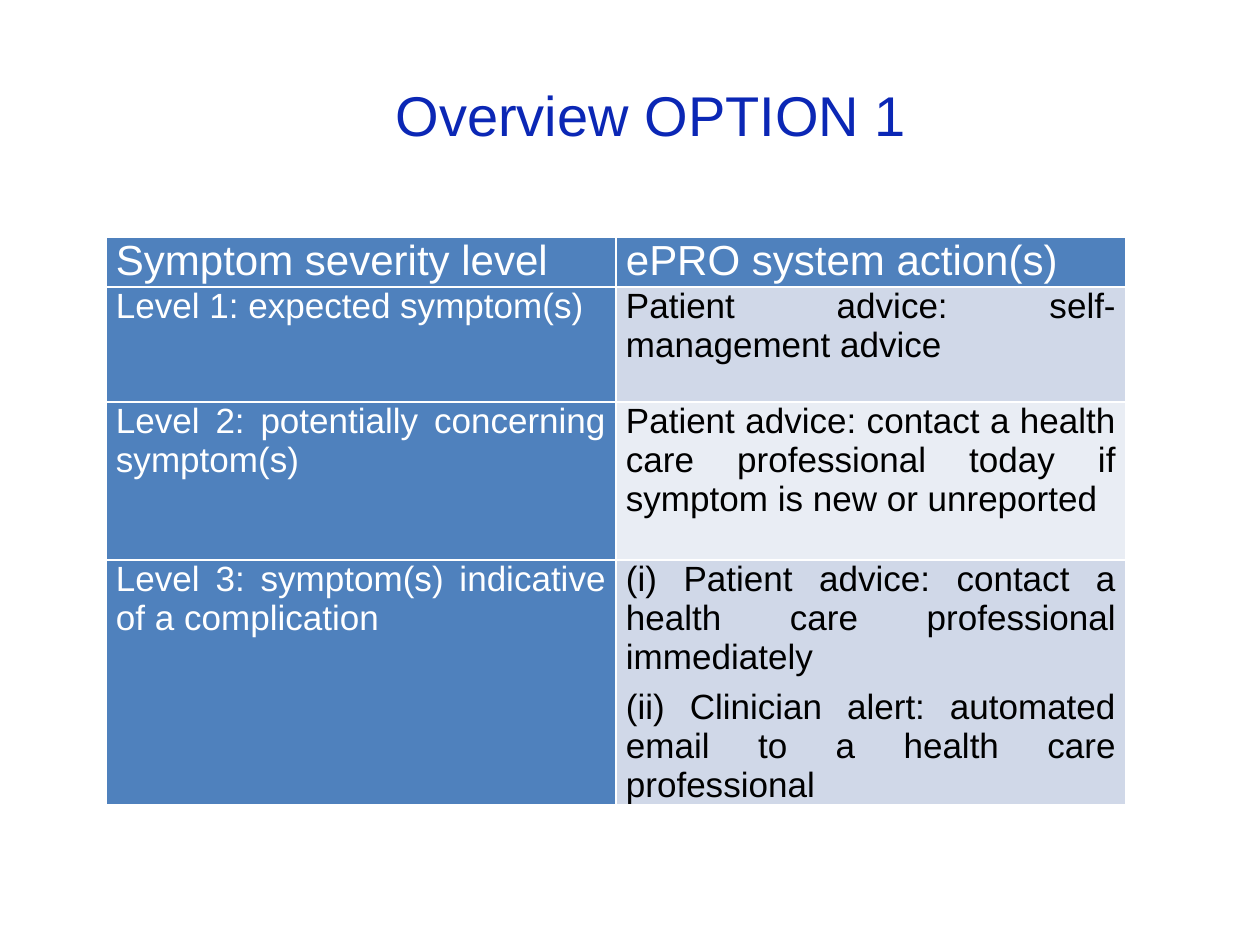
from lxml.etree import SubElement
from pptx import Presentation
from pptx.dml.color import RGBColor
from pptx.enum.text import MSO_ANCHOR, PP_ALIGN
from pptx.oxml.ns import qn
from pptx.util import Pt

TITLE = "Overview OPTION 1"
ROWS = [
    (["Symptom severity level"], ["ePRO system action(s)"]),
    (["Level 1: expected symptom(s)"],
     ["Patient advice: self-management advice"]),
    (["Level 2: potentially concerning symptom(s)"],
     ["Patient advice: contact a health care professional today "
      "if symptom is new or unreported"]),
    (["Level 3: symptom(s) indicative of a complication"],
     ["(i) Patient advice: contact a health care professional immediately",
      "(ii) Clinician alert: automated email to a health care professional"]),
]
HEIGHTS = [50, 115, 158, 226]
COL = 510
LEFT, TOP = 106, 237

THEME = {
    "font": "Arial", "title": "0B27B5", "head": "4F81BD",
    "bands": ["D0D8E8", "E9EDF4"], "light": "FFFFFF", "dark": "000000",
    "title_size": 32, "head_size": 24, "body_size": 20,
}


def px(n):
    return n * 914400 // 126


def write(frame, lines, size, color, align, gap=0, indent=0):
    for i, line in enumerate(lines):
        para = frame.paragraphs[0] if i == 0 else frame.add_paragraph()
        para.alignment = align
        para.space_before = Pt(gap if i else 0)
        if indent:
            props = para._p.get_or_add_pPr()
            props.set("marL", str(px(indent)))
            props.set("indent", "0")
        run = para.add_run()
        run.text = line
        run.font.name = THEME["font"]
        run.font.size = Pt(size)
        run.font.bold = False
        run.font.color.rgb = RGBColor.from_string(color)


def edge(cell, color, width=1):
    """Draw a line on all four sides; call before filling the cell."""
    props = cell._tc.get_or_add_tcPr()
    for side in ("a:lnL", "a:lnR", "a:lnT", "a:lnB"):
        line = SubElement(props, qn(side), w=str(Pt(width)))
        fill = SubElement(line, qn("a:solidFill"))
        SubElement(fill, qn("a:srgbClr"), val=color)


def add_title(slide):
    title = slide.shapes.title
    title.left, title.top = px(LEFT), px(-4)
    title.width, title.height = px(1134), px(158)
    frame = title.text_frame
    frame.word_wrap = True
    frame.vertical_anchor = MSO_ANCHOR.BOTTOM
    write(frame, [TITLE], THEME["title_size"], THEME["title"],
          PP_ALIGN.LEFT, indent=277)


def add_grid(slide):
    grid = slide.shapes.add_table(
        len(ROWS), 2, px(LEFT), px(TOP), px(2 * COL), px(sum(HEIGHTS))).table
    for col in grid.columns:
        col.width = px(COL)
    for r, (row, height) in enumerate(zip(ROWS, HEIGHTS)):
        grid.rows[r].height = px(height)
        for c, lines in enumerate(row):
            cell = grid.cell(r, c)
            cell.margin_left = cell.margin_right = px(10)
            cell.margin_top = cell.margin_bottom = 0
            strong = r == 0 or c == 0
            edge(cell, THEME["light"])
            cell.fill.solid()
            cell.fill.fore_color.rgb = RGBColor.from_string(
                THEME["head"] if strong else THEME["bands"][(r - 1) % 2])
            write(cell.text_frame, lines,
                  THEME["body_size" if r else "head_size"],
                  THEME["light" if strong else "dark"],
                  PP_ALIGN.JUSTIFY, gap=6)


def main():
    deck = Presentation()
    deck.slide_width, deck.slide_height = px(1260), px(945)
    slide = deck.slides.add_slide(deck.slide_layouts[5])
    add_title(slide)
    add_grid(slide)
    deck.save("out.pptx")


if __name__ == "__main__":
    main()
